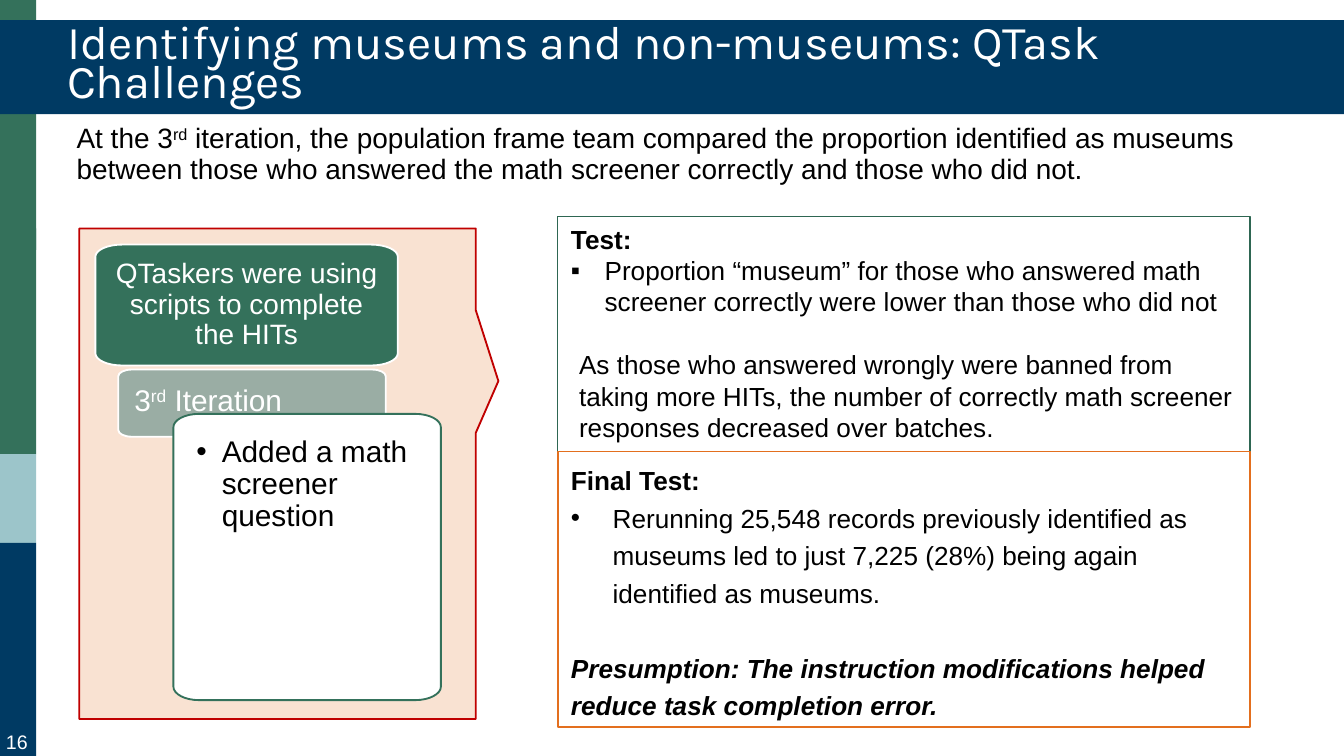
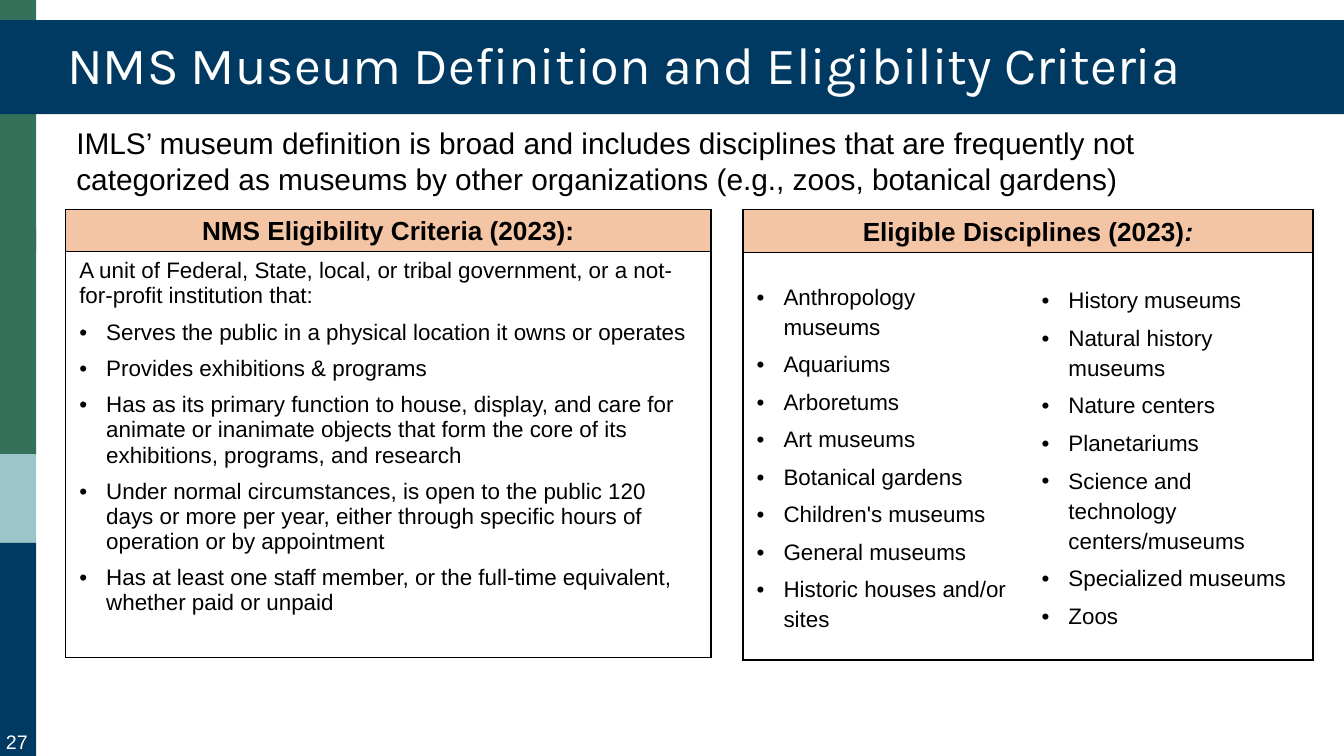
from dataclasses import dataclass, field

from lxml.etree import SubElement
from pptx import Presentation
from pptx.dml.color import RGBColor
from pptx.enum.shapes import MSO_SHAPE
from pptx.enum.text import MSO_ANCHOR, MSO_AUTO_SIZE, PP_ALIGN
from pptx.oxml import parse_xml
from pptx.oxml.ns import nsdecls, qn
from pptx.util import Pt

PX = 4572
PLAIN_TABLE = "{2D5ABB26-0587-4C30-8999-92F81FD0307C}"


@dataclass(frozen=True)
class Theme:
    navy: str = "003A63"
    green: str = "34715B"
    dark_green: str = "2E6652"
    sage: str = "9AADA4"
    pale_blue: str = "9CC5CA"
    peach: str = "F4C5A5"
    pale_peach: str = "F9E2D2"
    red: str = "C00000"
    orange: str = "E36F1E"
    black: str = "000000"
    white: str = "FFFFFF"
    title_font: str = "Karla"
    body_font: str = "Arial"
    title: float = 28
    long_title: float = 25.2
    large: float = 16
    intro: float = 15
    heading: float = 14
    body: float = 12
    page: float = 10.5


THEME = Theme()


@dataclass
class Line:
    runs: str | list
    font: dict = field(default_factory=dict)
    layout: dict = field(default_factory=dict)
    indent: int = 0
    bullet: str = ""


def px(*lengths):
    return [round(length * PX) for length in lengths]


def set_attributes(target, values):
    for name, value in values.items():
        setattr(target, name, value)


def set_margins(target, left, top, right, bottom):
    names = ("margin_left", "margin_top", "margin_right", "margin_bottom")
    set_attributes(target, dict(zip(names, px(left, top, right, bottom))))


def write_run(paragraph, text, size, color, font, values):
    values = dict(values)
    superscript = values.pop("superscript", False)
    run = paragraph.add_run()
    run.text = text
    set_attributes(run.font, {"size": Pt(size), "name": font, **values})
    run.font.color.rgb = RGBColor.from_string(color)
    if superscript:
        run.font._element.set("baseline", "30000")


def write_lines(text_frame, lines, size, color=THEME.black, font=THEME.body_font):
    for index, line in enumerate(lines):
        paragraph = text_frame.paragraphs[0] if index == 0 else text_frame.add_paragraph()
        set_attributes(paragraph, {"alignment": PP_ALIGN.LEFT, **line.layout})
        properties = paragraph._p.get_or_add_pPr()
        properties.set("marL", str(line.indent * PX))
        properties.set("indent", str(-line.indent * PX if line.bullet else 0))
        if line.bullet:
            SubElement(properties, qn("a:buFont"), typeface=THEME.body_font)
            SubElement(properties, qn("a:buChar"), char=line.bullet)
        runs = [(line.runs, {})] if isinstance(line.runs, str) else line.runs
        for text, values in runs:
            write_run(paragraph, text, size, color, font, {**line.font, **values})


def paint(shape, fill=None, outline=None, width=1):
    shape.shadow.inherit = False
    if fill:
        shape.fill.solid()
        shape.fill.fore_color.rgb = RGBColor.from_string(fill)
    else:
        shape.fill.background()
    if outline:
        shape.line.color.rgb = RGBColor.from_string(outline)
        shape.line.width = Pt(width)
    else:
        shape.line.fill.background()


def add_panel(slide, box, fill=None, outline=None, width=1, kind=MSO_SHAPE.RECTANGLE):
    shape = slide.shapes.add_shape(kind, *px(*box))
    paint(shape, fill, outline, width)
    set_attributes(shape.text_frame, {"word_wrap": True, "vertical_anchor": MSO_ANCHOR.TOP})
    return shape


def round_corners(shape, corners, vertices):
    segments = list(shape.element.iter(qn("a:lnTo")))
    for index, (x, y) in enumerate(corners):
        curve = segments[2 * index]
        curve.tag = qn("a:cubicBezTo")
        for position, vertex in enumerate(vertices[2 * index:2 * index + 2]):
            control = [round(start + 0.55 * (end - start)) for start, end in zip(vertex, (x, y))]
            point = parse_xml(f'<a:pt {nsdecls("a")} x="{control[0]}" y="{control[1]}"/>')
            curve.insert(position, point)


def add_card(slide, box, radii, fill, outline, margins, anchor=MSO_ANCHOR.TOP):
    left, top, width, height = px(*box)
    rx, ry = px(*radii)
    corners = ((0, 0), (width, 0), (width, height), (0, height))
    vertices = [
        (0, ry), (rx, 0), (width - rx, 0), (width, ry),
        (width, height - ry), (width - rx, height), (rx, height), (0, height - ry),
    ]
    builder = slide.shapes.build_freeform(*vertices[0])
    builder.add_line_segments(vertices[1:], close=True)
    shape = builder.convert_to_shape(left, top)
    round_corners(shape, corners, vertices)
    paint(shape, fill, outline)
    set_margins(shape.text_frame, *margins)
    set_attributes(shape.text_frame, {"word_wrap": True, "vertical_anchor": anchor})
    return shape


def add_text(slide, box, lines, size, color=THEME.black):
    text_box = slide.shapes.add_textbox(*px(*box))
    text_box.text_frame.word_wrap = True
    write_lines(text_box.text_frame, lines, size, color)
    return text_box


def add_table(slide, left, top, columns, rows):
    box = px(left, top, sum(columns), sum(rows))
    frame = slide.shapes.add_table(len(rows), len(columns), *box)
    table = frame.table
    set_attributes(table, {"first_row": False, "horz_banding": False})
    for style in frame.element.iter(qn("a:tableStyleId")):
        style.text = PLAIN_TABLE
    for column, width in zip(table.columns, px(*columns)):
        column.width = width
    for row, height in zip(table.rows, px(*rows)):
        row.height = height
    return table


def fill_cell(cell, lines, size, fill=None, sides="", width=1, anchor=MSO_ANCHOR.TOP):
    cell.vertical_anchor = anchor
    write_lines(cell.text_frame, lines, size)
    if fill:
        set_margins(cell, 20, 10, 20, 6)
        cell.fill.solid()
        cell.fill.fore_color.rgb = RGBColor.from_string(fill)
    else:
        cell.fill.background()
    properties = cell._tc.get_or_add_tcPr()
    for index, side in enumerate(sides):
        properties.insert(index, parse_xml(
            f'<a:ln{side} {nsdecls("a")} w="{Pt(width)}"><a:solidFill>'
            f'<a:srgbClr val="{THEME.black}"/></a:solidFill></a:ln{side}>'))


def move_bars_to_layout(slide):
    bars = ((0, 372, THEME.green), (340, 336, THEME.green),
            (676, 132, THEME.pale_blue), (808, 317, THEME.navy))
    for index, (top, height, color) in enumerate(bars):
        bar = add_panel(slide, (0, top, 54, height), color)
        slide.slide_layout.shapes.element.insert(2 + index, bar.element)


def add_slide(presentation, title, page, size, spacing):
    slide = presentation.slides.add_slide(presentation.slide_layouts[5])
    if len(presentation.slides) == 1:
        move_bars_to_layout(slide)
    banner = slide.shapes.title
    position = zip(("left", "top", "width", "height"), px(0, 30, 2000, 140))
    set_attributes(banner, dict(position))
    banner.fill.solid()
    banner.fill.fore_color.rgb = RGBColor.from_string(THEME.navy)
    set_attributes(banner.text_frame, {
        "vertical_anchor": MSO_ANCHOR.MIDDLE, "word_wrap": True,
        "auto_size": MSO_AUTO_SIZE.NONE})
    line = Line(title, layout={"line_spacing": spacing}, indent=80)
    write_lines(banner.text_frame, [line], size, THEME.white, THEME.title_font)
    number = add_text(slide, (0, 1076, 50, 49),
                      [Line(page, layout={"alignment": PP_ALIGN.CENTER})],
                      THEME.page, THEME.white)
    set_margins(number.text_frame, 0, 10, 0, 0)
    return slide


def build_challenges(presentation):
    slide = add_slide(presentation, "Identifying museums and non-museums: QTask Challenges",
                      "16", THEME.long_title, 0.7)
    bold, superscript = {"bold": True}, {"superscript": True}
    tight, loose = {"line_spacing": 0.9}, {"line_spacing": 1.2}

    callout = add_panel(slide, (118, 340, 590, 730), THEME.pale_peach, THEME.red,
                        kind=MSO_SHAPE.RECTANGULAR_CALLOUT)
    callout.adjustments[0], callout.adjustments[1] = 0.557, -0.189

    intro = add_table(slide, 94, 170, [1880], [118])
    fill_cell(intro.cell(0, 0), [Line([
        ("At the 3", {}), ("rd", superscript),
        (" iteration, the population frame team compared the proportion identified as museums "
         "between those who answered the math screener correctly and those who did not.", {}),
    ])], THEME.intro, anchor=MSO_ANCHOR.MIDDLE)

    test = add_panel(slide, (830, 322, 1030, 350), None, THEME.dark_green, 0.75)
    write_lines(test.text_frame, [
        Line("Test:", bold),
        Line("Proportion “museum” for those who answered math screener correctly were lower "
             "than those who did not", indent=50, bullet="▪"),
        Line("As those who answered wrongly were banned from taking more HITs, the number of "
             "correctly math screener responses decreased over batches.",
             layout={"space_before": Pt(17)}, indent=12),
    ], THEME.heading)

    problem = add_card(slide, (142, 364, 450, 180), (40, 18), THEME.green, THEME.white,
                       (24, 24, 24, 24), MSO_ANCHOR.MIDDLE)
    write_lines(problem.text_frame, [
        Line("QTaskers were using scripts to complete the HITs",
             layout={"alignment": PP_ALIGN.CENTER, **tight}),
    ], THEME.intro, THEME.white)

    iteration = add_card(slide, (176, 550, 398, 100), (20, 10), THEME.sage, THEME.white,
                         (24, 24, 24, 64))
    write_lines(iteration.text_frame, [
        Line([("3", {}), ("rd", superscript), (" Iteration", {})], layout=tight),
    ], THEME.large, THEME.white)

    remedy = add_card(slide, (258, 616, 398, 426), (38, 20), THEME.white, THEME.green,
                      (34, 34, 34, 34))
    write_lines(remedy.text_frame, [
        Line("Added a math screener question", layout=tight, indent=38, bullet="•"),
    ], THEME.large)

    final_test = add_panel(slide, (830, 672, 1030, 410), THEME.white, THEME.orange)
    write_lines(final_test.text_frame, [
        Line("Final Test:", bold, loose),
        Line("Rerunning 25,548 records previously identified as museums led to just 7,225 (28%) "
             "being again identified as museums.", layout=loose, indent=62, bullet="•"),
        Line("Presumption: The instruction modifications helped reduce task completion error.",
             {"bold": True, "italic": True}, {"space_before": Pt(20), **loose}),
    ], THEME.heading)


def build_criteria(presentation):
    slide = add_slide(presentation, "NMS Museum Definition and Eligibility Criteria",
                      "27", THEME.title, 0.9)
    bold, centered = {"bold": True}, {"alignment": PP_ALIGN.CENTER}

    disciplines = add_table(slide, 1106, 312, [424, 424], [64, 606])
    disciplines.cell(0, 0).merge(disciplines.cell(0, 1))
    fill_cell(disciplines.cell(0, 0), [
        Line([("Eligible Disciplines (2023)", {}), (":", {"italic": True})], bold, centered),
    ], THEME.heading, THEME.peach, "LRTB", anchor=MSO_ANCHOR.MIDDLE)
    names = (
        ("LTB", ("Anthropology museums", "Aquariums", "Arboretums", "Art museums",
                 "Botanical gardens", "Children's museums", "General museums",
                 "Historic houses and/or sites")),
        ("RTB", ("History museums", "Natural history museums", "Nature centers",
                 "Planetariums", "Science and technology centers/museums",
                 "Specialized museums", "Zoos")),
    )
    listed = {"line_spacing": 1.2, "space_after": Pt(4)}
    for column, (sides, entries) in enumerate(names):
        lines = [Line(entry, layout=listed, indent=40, bullet="•") for entry in entries]
        fill_cell(disciplines.cell(1, column), lines, THEME.body, sides=sides,
                  anchor=MSO_ANCHOR.MIDDLE)

    criteria = add_table(slide, 98, 312, [960], [62, 604])
    fill_cell(criteria.cell(0, 0), [Line("NMS Eligibility Criteria (2023):", bold, centered)],
              THEME.heading, THEME.peach, "LRTB", 0.75)
    spaced = {"space_before": Pt(3), "space_after": Pt(3)}
    requirements = (
        "Serves the public in a physical location it owns or operates",
        "Provides exhibitions & programs",
        "Has as its primary function to house, display, and care for animate or inanimate "
        "objects that form the core of its exhibitions, programs, and research",
        "Under normal circumstances, is open to the public 120 days or more per year, either "
        "through specific hours of operation or by appointment",
        "Has at least one staff member, or the full-time equivalent, whether paid or unpaid",
    )
    lead = Line("A unit of Federal, State, local, or tribal government, or a not-for-profit "
                "institution that:", layout=spaced)
    bullets = [Line(text, layout=spaced, indent=40, bullet="•") for text in requirements]
    fill_cell(criteria.cell(1, 0), [lead, *bullets], THEME.body, sides="LRTB", width=0.75)

    add_text(slide, (94, 176, 1794, 128), [
        Line("IMLS’ museum definition is broad and includes disciplines that are frequently not "
             "categorized as museums by other organizations (e.g., zoos, botanical gardens)"),
    ], THEME.large)


def main():
    presentation = Presentation()
    presentation.slide_width, presentation.slide_height = px(2000, 1125)
    build_challenges(presentation)
    build_criteria(presentation)
    presentation.save("out.pptx")


if __name__ == "__main__":
    main()
